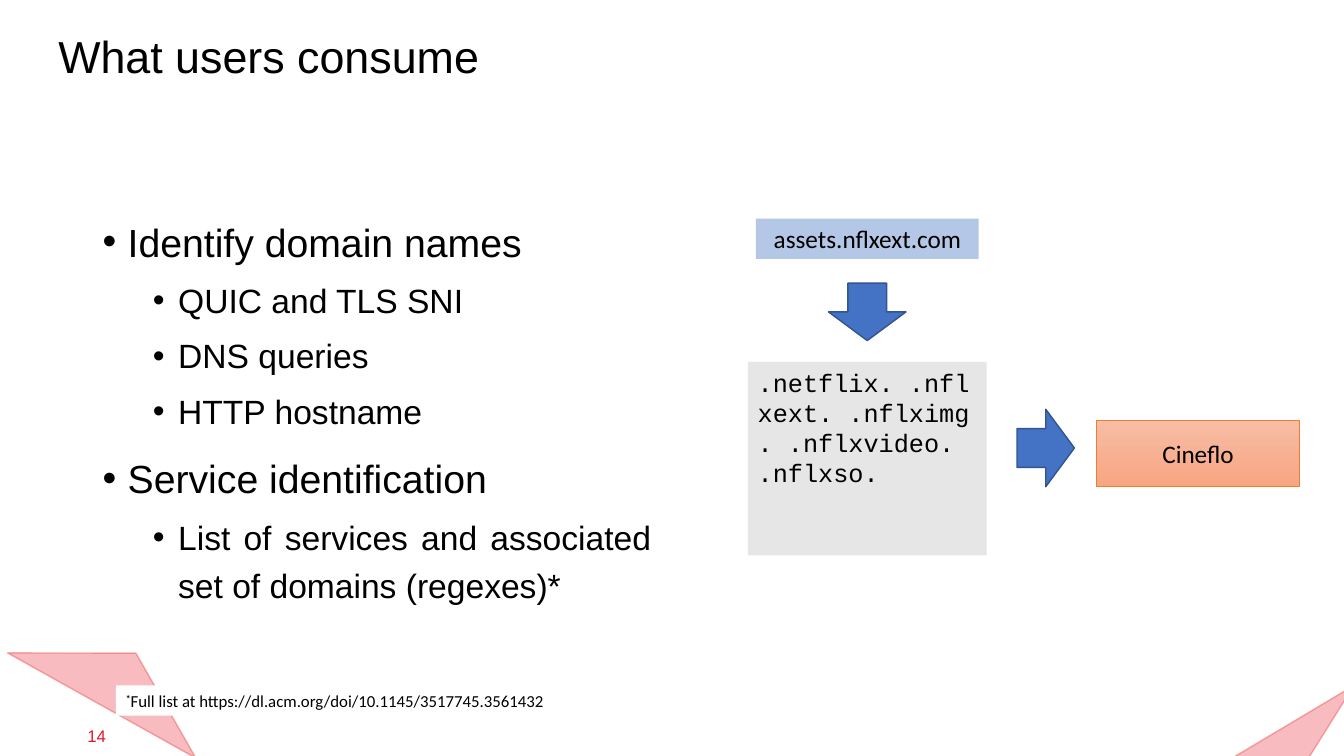
from dataclasses import dataclass

from lxml.etree import SubElement
from pptx import Presentation
from pptx.dml.color import RGBColor
from pptx.enum.shapes import MSO_SHAPE
from pptx.enum.text import MSO_ANCHOR, PP_ALIGN
from pptx.oxml.ns import qn
from pptx.util import Pt


@dataclass(frozen=True)
class Theme:
    text: str = "000000"
    accent: str = "E51829"
    accent_line: str = "EC3A34"
    arrow: str = "4472C4"
    arrow_line: str = "325491"
    domain: str = "B4C7E7"
    patterns: str = "E7E6E6"
    service_top: str = "F7BDA5"
    service_bottom: str = "F8A582"
    service_line: str = "ED7D31"
    paper: str = "FFFFFF"
    sans: str = "Arial"
    label: str = "Calibri"
    mono: str = "Courier New"
    title_size: int = 32
    bullet_sizes: tuple = (28, 24)
    label_size: int = 18
    small_size: int = 12


theme = Theme()
presentation = Presentation()
presentation.slide_width, presentation.slide_height = Pt(960), Pt(540)
slide = presentation.slides.add_slide(presentation.slide_layouts[6])


def add_box(box, kind=None, fill=None, line=None, line_width=1, anchor=MSO_ANCHOR.TOP):
    """Add a preset shape, or a text box when no kind is given."""
    left, top, width, height = map(Pt, box)
    if kind is None:
        shape = slide.shapes.add_textbox(left, top, width, height)
    else:
        shape = slide.shapes.add_shape(kind, left, top, width, height)
        shape.shadow.inherit = False
        if fill:
            shape.fill.solid()
            shape.fill.fore_color.rgb = RGBColor.from_string(fill)
        if line:
            shape.line.color.rgb = RGBColor.from_string(line)
            shape.line.width = Pt(line_width)
        else:
            shape.line.fill.background()
    shape.text_frame.word_wrap = True
    shape.text_frame.vertical_anchor = anchor
    return shape


def add_run(paragraph, text, size, font=theme.label, color=theme.text, align=PP_ALIGN.LEFT):
    paragraph.alignment = align
    run = paragraph.add_run()
    run.text = text
    run.font.size = Pt(size)
    run.font.name = font
    run.font.color.rgb = RGBColor.from_string(color)
    return run


# Corner triangles
for box, rotation, apex in [
    ((903.6, 475.2, 52.6, 108.7), 48, 0.41),
    ((6.5, 462.2, 154.1, 44.6), 29.2, 0.52),
]:
    triangle = add_box(box, MSO_SHAPE.ISOSCELES_TRIANGLE, theme.accent, theme.accent_line)
    triangle.rotation = rotation
    triangle.adjustments[0] = apex
    colors = triangle._element.spPr.iter(qn("a:srgbClr"))
    for color, alpha in zip(list(colors), (29000, 39000)):
        SubElement(color, qn("a:alpha")).set("val", str(alpha))

# Title and slide number
title = add_box((34.6, 2.2, 724.3, 79.9), anchor=MSO_ANCHOR.MIDDLE)
paragraph = title.text_frame.paragraphs[0]
paragraph.line_spacing = 0.9
add_run(paragraph, "What users consume", theme.title_size, theme.sans)

number = add_box((42.5, 511.2, 40.3, 28.8), anchor=MSO_ANCHOR.MIDDLE)
add_run(number.text_frame.paragraphs[0], "14", theme.small_size, theme.sans,
        theme.accent, PP_ALIGN.RIGHT)

# Bullets
bullets = [
    (0, "Identify domain names"),
    (1, "QUIC and TLS SNI"),
    (1, "DNS queries"),
    (1, "HTTP hostname"),
    (0, "Service identification"),
    (1, "List of services and associated set of domains (regexes)*"),
]
body = add_box((66.2, 145.4, 406.1, 375.1)).text_frame
for index, (level, text) in enumerate(bullets):
    paragraph = body.add_paragraph() if index else body.paragraphs[0]
    paragraph.level = level
    paragraph.line_spacing = 1.2
    if index:
        paragraph.space_before = Pt(5 if level else 10)
    properties = paragraph._p.get_or_add_pPr()
    properties.set("marL", str(Pt(18 + 36 * level)))
    properties.set("indent", str(Pt(-18)))
    SubElement(properties, qn("a:buFont")).set("typeface", theme.sans)
    SubElement(properties, qn("a:buChar")).set("char", "•")
    add_run(paragraph, text, theme.bullet_sizes[level], theme.sans, align=PP_ALIGN.JUSTIFY)

# Domain name -> patterns -> service
domain = add_box((540, 156.2, 159.1, 28.8), MSO_SHAPE.RECTANGLE, theme.domain)
add_run(domain.text_frame.paragraphs[0], "assets.nflxext.com", theme.label_size,
        align=PP_ALIGN.CENTER)

patterns = [".netflix.", ".nflxext.", ".nflximg.", ".nflxvideo.", ".nflxso."]
no_break_space = chr(160)
pattern_box = add_box((534.2, 258.5, 170.6, 138.2), MSO_SHAPE.RECTANGLE, theme.patterns)
add_run(pattern_box.text_frame.paragraphs[0], no_break_space.join(patterns),
        theme.label_size, theme.mono)

service = add_box((783.4, 300.2, 144.7, 47.5), MSO_SHAPE.RECTANGLE,
                  line=theme.service_line, line_width=0.5, anchor=MSO_ANCHOR.MIDDLE)
service.fill.gradient()
service.fill.gradient_angle = 270
for stop, color in zip(service.fill.gradient_stops, (theme.service_top, theme.service_bottom)):
    stop.color.rgb = RGBColor.from_string(color)
add_run(service.text_frame.paragraphs[0], "Cineflo", theme.label_size, align=PP_ALIGN.CENTER)

for left, top, rotation in [(591.8, 202.3, 0), (719.3, 299.5, 270)]:
    arrow = add_box((left, top, 55.4, 41), MSO_SHAPE.DOWN_ARROW, theme.arrow, theme.arrow_line)
    arrow.rotation = rotation

# Footnote
footnote = add_box((82.8, 489.6, 514.1, 21.6), MSO_SHAPE.RECTANGLE, theme.paper)
paragraph = footnote.text_frame.paragraphs[0]
star = add_run(paragraph, "*", theme.small_size)
star.font.bold = True
star._r.get_or_add_rPr().set("baseline", "30000")
add_run(paragraph, "Full list at https://dl.acm.org/doi/10.1145/3517745.3561432", theme.small_size)

presentation.save("out.pptx")
